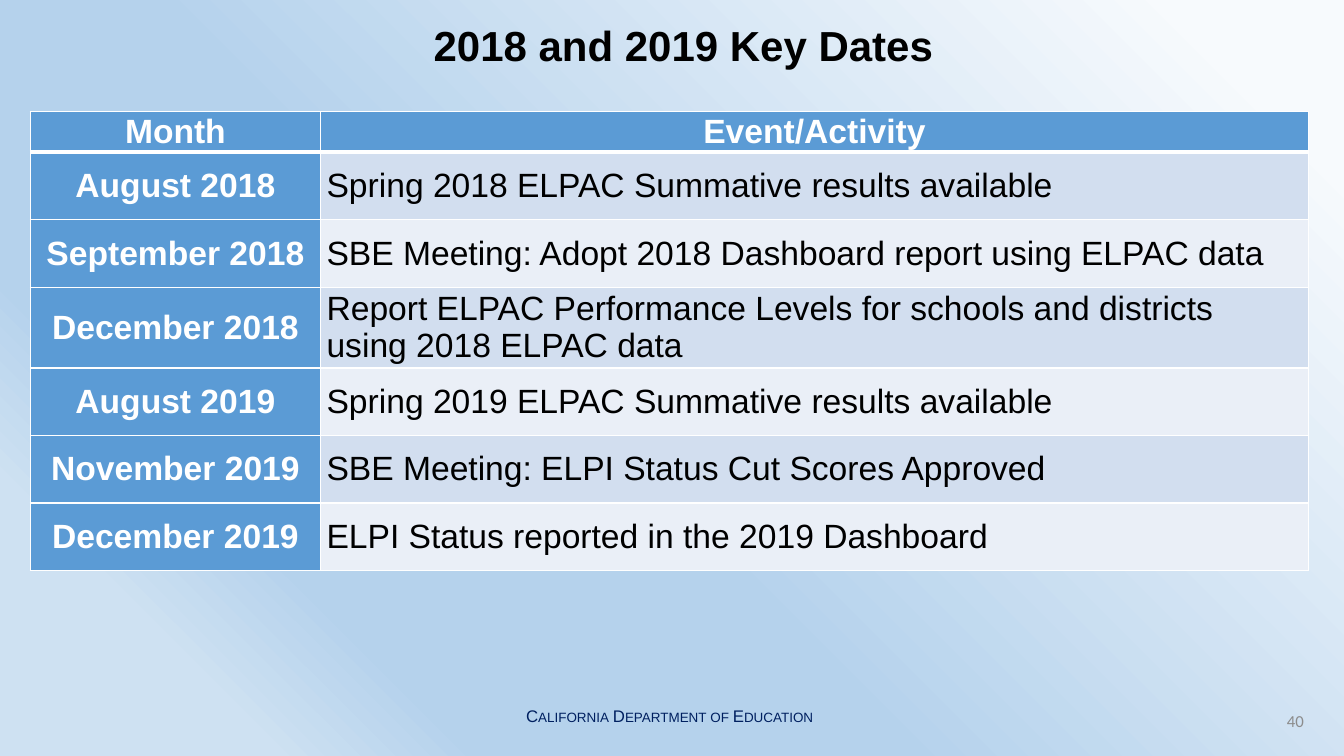
from lxml import etree
from pptx import Presentation
from pptx.dml.color import RGBColor
from pptx.enum.text import MSO_ANCHOR, PP_ALIGN
from pptx.oxml.ns import qn
from pptx.util import Inches, Pt

LEFT, CENTER, RIGHT = PP_ALIGN.LEFT, PP_ALIGN.CENTER, PP_ALIGN.RIGHT
TOP, MIDDLE = MSO_ANCHOR.TOP, MSO_ANCHOR.MIDDLE

COLORS = {
    "ink": "000000", "white": "FFFFFF", "navy": "002060", "gray": "8C8C8C",
    "head": "5B9BD5", "band_dark": "D2DEEF", "band_light": "EAEFF7",
}
BACKDROP = [(8, "F7FAFD"), (57, "B5D2EC"), (77, "B5D2EC"), (87, "CEE1F2")]

FORMATS = {
    "title": {"size": Pt(30), "name": "Arial", "bold": True},
    "footer": {"size": Pt(12), "name": "Arial"},
    "number": {"size": Pt(12), "name": "Calibri"},
    "head": {"size": Pt(24), "name": "Arial", "bold": True},
    "body": {"size": Pt(24), "name": "Arial", "bold": False},
}

HEADINGS = ("Month", "Event/Activity")
KEY_DATES = [
    ("August 2018", "Spring 2018 ELPAC Summative results available"),
    ("September 2018", "SBE Meeting: Adopt 2018 Dashboard report using ELPAC data"),
    ("December 2018", "Report ELPAC Performance Levels for schools and districts using 2018 ELPAC data"),
    ("August 2019", "Spring 2019 ELPAC Summative results available"),
    ("November 2019", "SBE Meeting: ELPI Status Cut Scores Approved"),
    ("December 2019", "ELPI Status reported in the 2019 Dashboard"),
]


class Deck:
    COLS, ROWS = 100, 75

    def __init__(self):
        self.prs = Presentation()
        self.prs.slide_width, self.prs.slide_height = Inches(13.33), Inches(7.5)
        self.s = self.prs.slides.add_slide(self.prs.slide_layouts[6])

    def x(self, cols):
        return int(self.prs.slide_width * cols / self.COLS)

    def y(self, rows):
        return int(self.prs.slide_height * rows / self.ROWS)

    def background(self, stops, angle):
        fill = self.s.background.fill
        fill.gradient()
        fill.gradient_angle = angle
        gs_list = next(self.s.element.iter(qn("a:gsLst")))
        for gs in list(gs_list):
            gs_list.remove(gs)
        for pos, color in stops:
            gs = etree.SubElement(gs_list, qn("a:gs"), pos=str(pos * 1000))
            etree.SubElement(gs, qn("a:srgbClr"), val=color)

    def run(self, tf, text, style, color, align):
        p = tf.paragraphs[0]
        p.alignment = align
        r = p.add_run()
        r.text = text
        for key, value in FORMATS[style].items():
            setattr(r.font, key, value)
        r.font.color.rgb = RGBColor.from_string(COLORS[color])
        return p, r

    def text(self, box, text, style, color, align, anchor=MIDDLE, wrap=True):
        col, row, width, height = box
        sp = self.s.shapes.add_textbox(self.x(col), self.y(row), self.x(width), self.y(height))
        tf = sp.text_frame
        tf.word_wrap, tf.vertical_anchor = wrap, anchor
        return self.run(tf, text, style, color, align)

    def borders(self, cell, widths):
        tc_pr = cell._tc.get_or_add_tcPr()
        for i, (side, width) in enumerate(zip("LRTB", widths)):
            ln = etree.Element(qn("a:ln" + side), w=str(int(Pt(width))))
            fill = etree.SubElement(ln, qn("a:solidFill"))
            etree.SubElement(fill, qn("a:srgbClr"), val=COLORS["white"])
            tc_pr.insert(i, ln)

    def cell(self, cell, text, style, color, fill, align, widths):
        layout = {"margin_left": Inches(0.06), "margin_right": Inches(0.06),
                  "margin_top": 0, "margin_bottom": 0, "vertical_anchor": MIDDLE}
        for key, value in layout.items():
            setattr(cell, key, value)
        cell.fill.solid()
        cell.fill.fore_color.rgb = RGBColor.from_string(COLORS[fill])
        self.borders(cell, widths)
        self.run(cell.text_frame, text, style, color, align)

    def table(self, col, row, widths, head_height, row_height, rows):
        heights = [head_height] + [row_height] * (len(rows) - 1)
        tbl = self.s.shapes.add_table(
            len(rows), len(widths), self.x(col), self.y(row),
            self.x(sum(widths)), self.y(sum(heights))).table
        tbl.first_row = tbl.horz_banding = False
        for column, width in zip(tbl.columns, widths):
            column.width = self.x(width)
        for i, (height, texts) in enumerate(zip(heights, rows)):
            tbl.rows[i].height = self.y(height)
            lines = (1, 1, 3 if i == 1 else 1, 3 if i == 0 else 1)
            for j, text in enumerate(texts):
                if i == 0 or j == 0:
                    look = ("head", "white", "head", CENTER)
                else:
                    look = ("body", "ink", "band_dark" if i % 2 else "band_light", LEFT)
                self.cell(tbl.cell(i, j), text, *look, lines)


def main():
    deck = Deck()
    deck.background(BACKDROP, 225)
    p, r = deck.text((38.4, 69.5, 23.2, 3), "California Department of Education",
                     "footer", "navy", LEFT, TOP, False)
    r.font._element.set("cap", "small")
    p, r = deck.text((16.65, 2.2, 68.4, 5.2), "2018 and 2019 Key Dates", "title", "ink", CENTER)
    p.line_spacing = 0.9
    deck.text((75.25, 69.5, 22.5, 4), "40", "number", "gray", RIGHT)
    deck.table(2.25, 11.1, (21.6, 73.5), 3.3, 6.7, [HEADINGS] + KEY_DATES)
    deck.prs.save("out.pptx")


if __name__ == "__main__":
    main()
